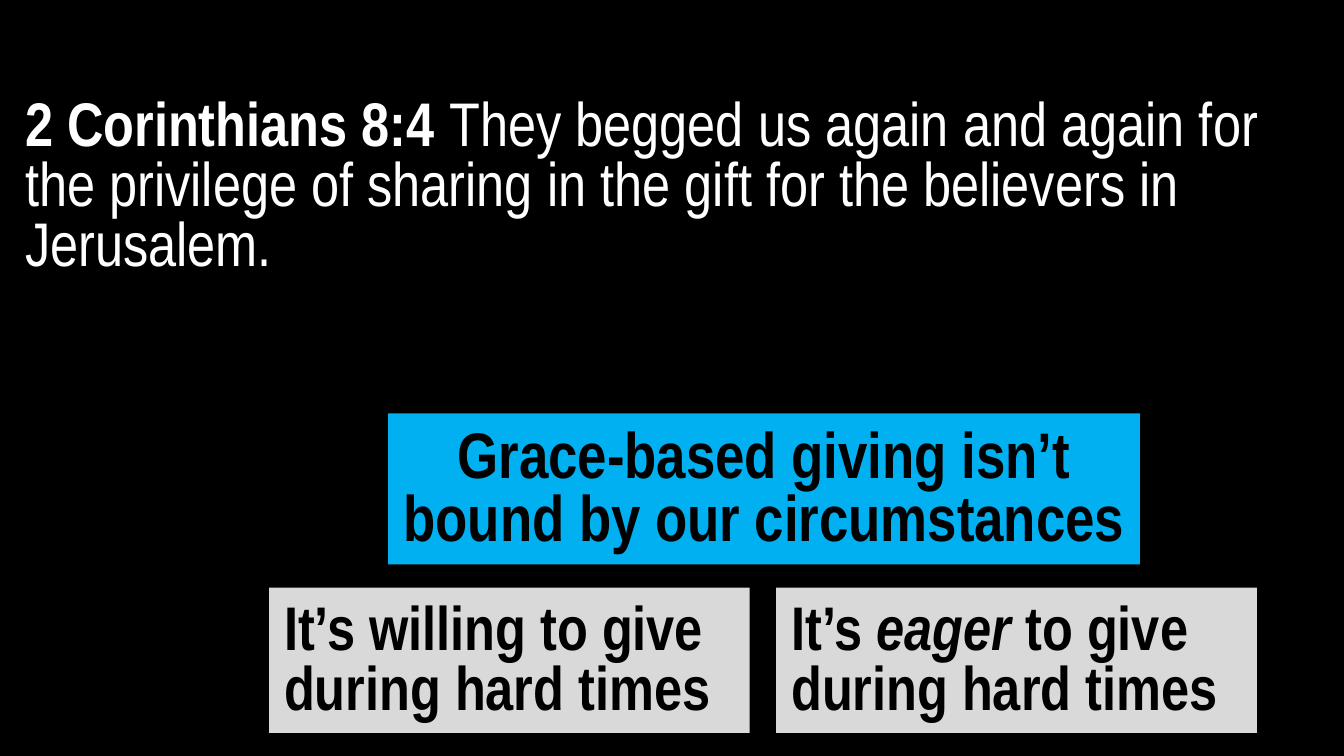
from lxml.etree import SubElement
from pptx import Presentation
from pptx.dml.color import RGBColor
from pptx.enum.shapes import MSO_SHAPE
from pptx.enum.text import MSO_ANCHOR, MSO_AUTO_SIZE, PP_ALIGN
from pptx.oxml.ns import qn
from pptx.util import Pt

BLACK = RGBColor(0x00, 0x00, 0x00)
WHITE = RGBColor(0xFF, 0xFF, 0xFF)
BLUE = RGBColor(0x00, 0xB0, 0xF0)
GREY = RGBColor(0xD9, 0xD9, 0xD9)


class VerseSlide:
    font = "Arial Narrow"

    def __init__(self, prs):
        self.s = prs.slides.add_slide(prs.slide_layouts[1])
        fill = self.s.background.fill
        fill.solid()
        fill.fore_color.rgb = BLACK

    def place(self, sp, box, color=None):
        sp.left, sp.top, sp.width, sp.height = (Pt(v) for v in box)
        if color is not None:
            sp.fill.solid()
            sp.fill.fore_color.rgb = color

    def add_text(self, sp, runs, insets, size, leading, color=BLACK,
                 align=PP_ALIGN.LEFT, after=0):
        """Each run is (text, bold, italic)."""
        tf = sp.text_frame
        tf.word_wrap = True
        tf.auto_size = MSO_AUTO_SIZE.NONE
        tf.vertical_anchor = MSO_ANCHOR.TOP
        (tf.margin_left, tf.margin_top,
         tf.margin_right, tf.margin_bottom) = (Pt(v) for v in insets)
        p = tf.paragraphs[0]
        p.alignment = align
        p.line_spacing = Pt(leading)
        p.space_before, p.space_after = Pt(0), Pt(after)
        for text, bold, italic in runs:
            r = p.add_run()
            r.text = text
            r.font.name, r.font.size = self.font, Pt(size)
            r.font.bold, r.font.italic = bold, italic
            r.font.color.rgb = color
        return p

    def title(self, text, box):
        sp = self.s.shapes.title
        self.place(sp, box, BLUE)
        self.add_text(sp, [(text, True, False)], (3.6, 10.8, 3.6, 3.6),
                      46, 45, align=PP_ALIGN.CENTER, after=12)

    def verse(self, runs, box):
        sp = self.s.placeholders[1]
        self.place(sp, box)
        p = self.add_text(sp, runs, (10, 3.6, 7.2, 3.6), 44, 43, WHITE,
                          after=12)
        # No bullet and no hanging indent
        pPr = p._p.get_or_add_pPr()
        pPr.set("marL", "0")
        pPr.set("indent", "0")
        SubElement(pPr, qn("a:buNone"))

    def point(self, runs, box):
        sp = self.s.shapes.add_shape(MSO_SHAPE.RECTANGLE,
                                     *(Pt(v) for v in box))
        self.place(sp, box, GREY)
        sp.line.fill.background()
        sp.shadow.inherit = False
        self.add_text(sp, runs, (10.8, 10.8, 3.6, 3.6), 44, 43)


def main():
    prs = Presentation()
    prs.slide_width, prs.slide_height = Pt(960), Pt(540)
    slide = VerseSlide(prs)

    # Main statement
    slide.title("Grace-based giving isn’t bound by our circumstances",
                (277.2, 295.2, 537.1, 108))

    # Bible verse
    slide.verse([("2 Corinthians 8:4 ", True, False),
                 ("They begged us again and again for the privilege of "
                  "sharing in the gift for the believers in Jerusalem.",
                  False, False)],
                (7.9, 66.5, 933.1, 473.5))

    # Two supporting points side by side
    points = [
        [("It’s willing to give during hard times", True, False)],
        [("It’s ", True, False), ("eager", True, True),
         (" to give during hard times", True, False)],
    ]
    for i, runs in enumerate(points):
        slide.point(runs, (192.2 + i * 362.2, 419.8, 343.4, 103.7))

    prs.save("out.pptx")


if __name__ == "__main__":
    main()
